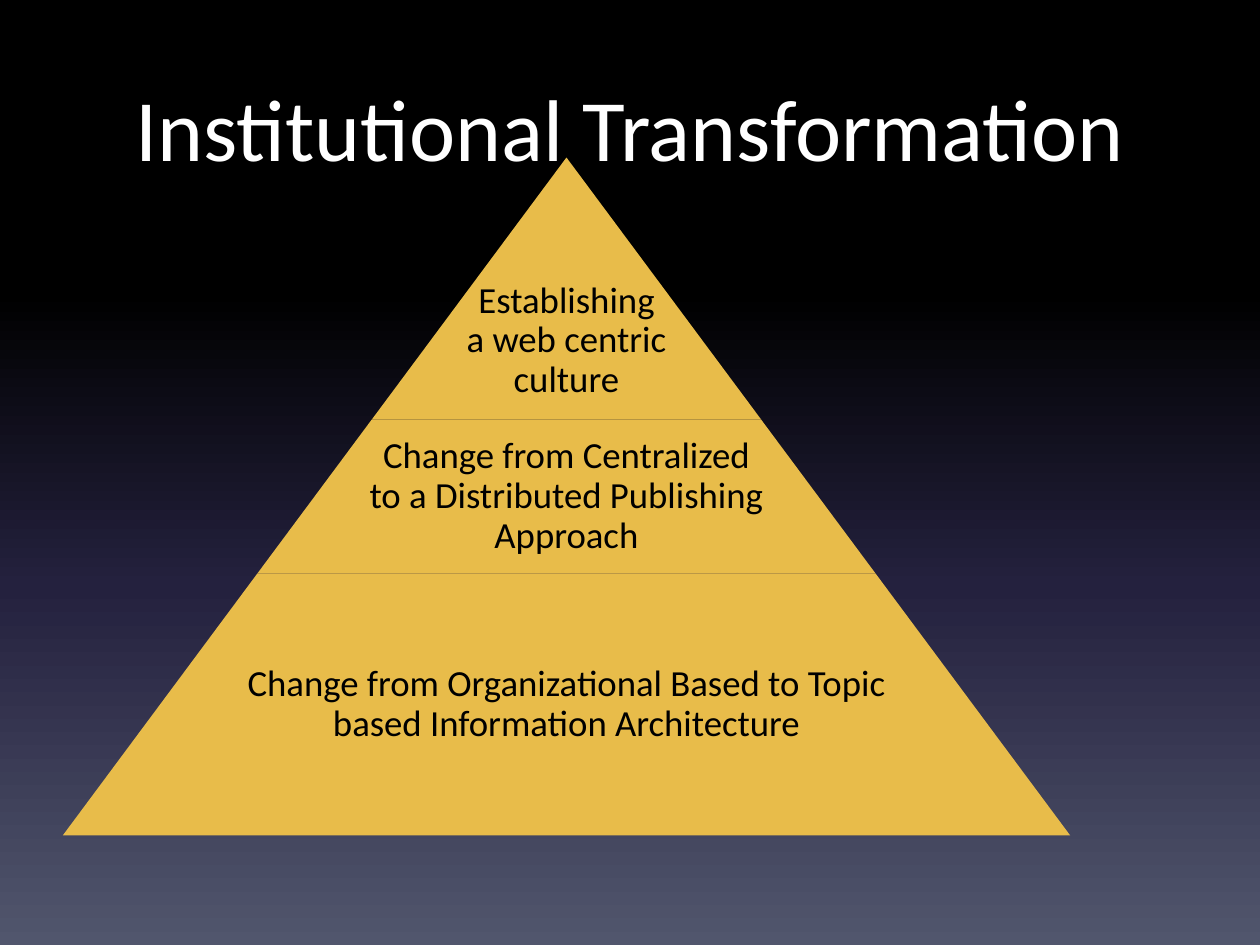
from dataclasses import dataclass

from lxml.etree import SubElement
from pptx import Presentation
from pptx.dml.color import RGBColor
from pptx.enum.shapes import MSO_SHAPE as Shape
from pptx.enum.text import MSO_ANCHOR as Anchor, PP_ALIGN as Align
from pptx.oxml.ns import qn
from pptx.slide import Slide
from pptx.text.text import _Paragraph as Paragraph
from pptx.util import Pt


@dataclass(frozen=True)
class Theme:
    font: str = "Calibri"
    title_size: float = 50
    tier_size: float = 21
    title_color: str = "FFFFFF"
    tier_color: str = "000000"
    gold: str = "E8BC4A"
    # Background stops, top to bottom: percent and colour
    backdrop: tuple = ((0, "000000"), (31, "000000"), (62, "24213E"), (100, "51566D"))


@dataclass(frozen=True)
class Tier:
    lines: tuple[str, ...]
    height: float
    text_share: float = 0.65  # part of the base width given to the text
    text_drop: float = 0      # shift of the text below the tier's middle


THEME = Theme()
APEX_X, APEX_Y = 323.7, 90
SLOPE = 0.743  # half-width gained per point of depth
INSET = 2

TIERS = (
    Tier(("Establishing", "a web centric", "culture"), 149.8, text_share=1, text_drop=30),
    Tier(("Change from Centralized to a Distributed Publishing Approach",), 87.8),
    Tier(("Change from Organizational Based to Topic based Information Architecture",), 149.8),
)


def style(paragraph: Paragraph, size: float, color: str) -> None:
    paragraph.alignment = Align.CENTER
    paragraph.font.name = THEME.font
    paragraph.font.size = Pt(size)
    paragraph.font.color.rgb = RGBColor.from_string(color)


def paint_background(slide: Slide) -> None:
    fill = slide.background.fill
    fill.gradient()
    fill.gradient_angle = 270  # counter-clockwise, so downwards
    stops = slide.background._cSld.find(".//" + qn("a:gsLst"))
    for stop in list(stops):
        stops.remove(stop)
    for percent, color in THEME.backdrop:
        stop = SubElement(stops, qn("a:gs"), pos=str(percent * 1000))
        SubElement(stop, qn("a:srgbClr"), val=color)


def add_title(slide: Slide, text: str) -> None:
    title = slide.shapes.title
    title.left, title.top, title.width, title.height = Pt(36), Pt(36), Pt(648), Pt(90)
    frame = title.text_frame
    frame.text = text
    frame.vertical_anchor = Anchor.TOP
    frame.margin_top = Pt(6.5)
    style(frame.paragraphs[0], THEME.title_size, THEME.title_color)


def add_tier(slide: Slide, tier: Tier, depth: float) -> None:
    base = 2 * SLOPE * (depth + tier.height)
    top = APEX_Y + depth

    # Gold band
    band = slide.shapes.add_shape(Shape.TRAPEZOID, Pt(APEX_X - base / 2), Pt(top),
                                  Pt(base), Pt(tier.height))
    band.adjustments[0] = SLOPE
    band.shadow.inherit = False
    band.fill.solid()
    band.fill.fore_color.rgb = RGBColor.from_string(THEME.gold)
    band.line.fill.background()

    # Label
    width = base * tier.text_share
    label = slide.shapes.add_textbox(Pt(APEX_X - width / 2), Pt(top), Pt(width), Pt(tier.height))
    frame = label.text_frame
    frame.word_wrap = True
    frame.vertical_anchor = Anchor.MIDDLE
    frame.margin_left = frame.margin_right = frame.margin_bottom = Pt(INSET)
    frame.margin_top = Pt(INSET + 2 * tier.text_drop)
    frame.text = "\n".join(tier.lines)
    for paragraph in frame.paragraphs:
        paragraph.line_spacing = 0.9
        style(paragraph, THEME.tier_size, THEME.tier_color)


def main() -> None:
    deck = Presentation()
    deck.slide_width, deck.slide_height = Pt(720), Pt(540)
    slide = deck.slides.add_slide(deck.slide_layouts[5])  # title only
    paint_background(slide)
    add_title(slide, "Institutional Transformation")

    # Pyramid, from the apex down
    depth = 0.0
    for tier in TIERS:
        add_tier(slide, tier, depth)
        depth += tier.height
    deck.save("out.pptx")


if __name__ == "__main__":
    main()
